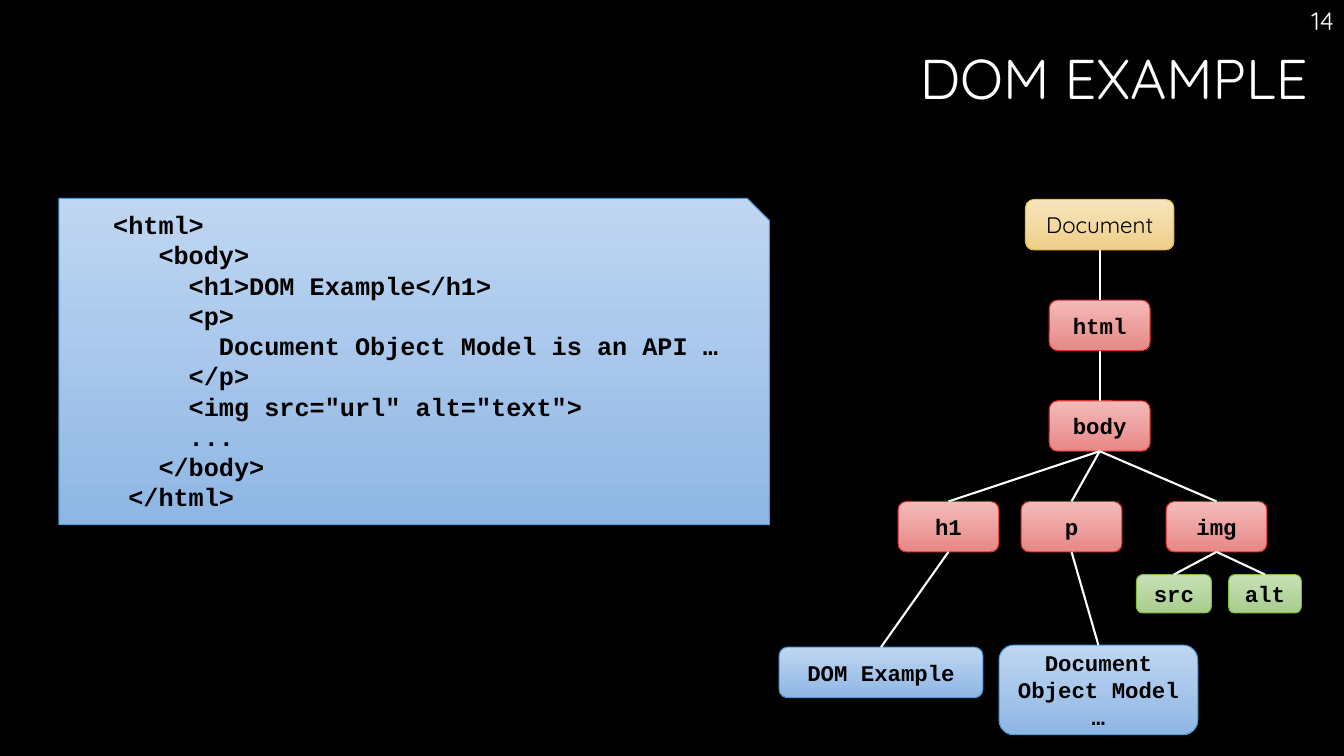
from dataclasses import dataclass

from lxml.etree import SubElement
from pptx import Presentation
from pptx.dml.color import RGBColor
from pptx.enum.shapes import MSO_CONNECTOR as Connector, MSO_SHAPE as ShapeKind
from pptx.enum.text import MSO_ANCHOR as Anchor, MSO_AUTO_SIZE as AutoSize, PP_ALIGN as Align
from pptx.oxml.ns import qn
from pptx.shapes.autoshape import Shape
from pptx.slide import Slide
from pptx.text.text import TextFrame
from pptx.util import Pt

COLOURS = {"background": "000000", "light": "FFFFFF", "dark": "000000"}
# Gradient top, gradient bottom, outline
PALETTES = {
    "text": ("BFD6F2", "8FB7E4", "4A9BDC"),
    "element": ("F3BAB9", "E78887", "DF2E28"),
    "root": ("F8E5BD", "EECF89", "E9BF35"),
    "attribute": ("C8E1B7", "A8CD8D", "81BB42"),
}
SANS, MONO = "Quicksand", "Courier New"
CODE_SIZE = 18
CHARACTER_WIDTH = 0.6 * CODE_SIZE
TREE_TOP, ROW_STEP, NODE_HEIGHT = 142.5, 71.9, 36
BOTTOM, TOP = 2, 0


@dataclass
class Node:
    key: str
    label: str
    palette: str
    centre: float
    top: float
    width: float = 72
    height: float = NODE_HEIGHT
    parent: str = ""


@dataclass
class CodeLine:
    indent: int
    text: str


def row_top(row: int) -> float:
    return TREE_TOP + row * ROW_STEP


NODES = [
    Node("document", "Document", "root", 785.5, row_top(0), 106),
    Node("html", "html", "element", 785.5, row_top(1), parent="document"),
    Node("body", "body", "element", 785.5, row_top(2), parent="html"),
    Node("h1", "h1", "element", 677.5, row_top(3), parent="body"),
    Node("p", "p", "element", 765.4, row_top(3), parent="body"),
    Node("img", "img", "element", 869, row_top(3), parent="body"),
    Node("src", "src", "attribute", 838.5, 410.4, 53.5, 27.4, "img"),
    Node("alt", "alt", "attribute", 903.6, 410.4, 52, 27.4, "img"),
    Node("heading", "DOM Example", "text", 629.3, 462.3, 145.5, parent="h1"),
    Node("paragraph", "Document Object Model …", "text", 784.6, 460.8, 142, 64, "p"),
]

CODE = [
    CodeLine(1, "<html>"),
    CodeLine(4, "<body>"),
    CodeLine(6, "<h1>DOM Example</h1>"),
    CodeLine(6, "<p>"),
    CodeLine(8, "Document Object Model is an API …"),
    CodeLine(6, "</p>"),
    CodeLine(6, '<img src="url" alt="text">'),
    CodeLine(6, "..."),
    CodeLine(4, "</body>"),
    CodeLine(2, "</html>"),
]


def colour(name: str) -> RGBColor:
    return RGBColor.from_string(COLOURS[name])


def format_text(frame: TextFrame, font_name: str, size: float, colour_name: str,
                align: Align, bold: bool = False) -> None:
    for paragraph in frame.paragraphs:
        paragraph.alignment = align
        for run in paragraph.runs:
            run.font.name = font_name
            run.font.size = Pt(size)
            run.font.bold = bold
            run.font.color.rgb = colour(colour_name)


def apply_palette(shape: Shape, palette: str) -> None:
    start, end, outline = PALETTES[palette]
    shape.shadow.inherit = False
    shape.fill.gradient()
    shape.fill.gradient_angle = 270
    for stop, position, value in zip(shape.fill.gradient_stops, (0, 1), (start, end)):
        stop.position = position
        stop.color.rgb = RGBColor.from_string(value)
    shape.line.color.rgb = RGBColor.from_string(outline)
    shape.line.width = Pt(0.75)


def add_title(slide: Slide) -> None:
    title = slide.shapes.title
    title.left, title.top, title.width, title.height = Pt(18.7), Pt(33), Pt(922.5), Pt(101.5)
    frame = title.text_frame
    frame.text = "DOM EXAMPLE"
    frame.auto_size = AutoSize.NONE
    frame.vertical_anchor = Anchor.TOP
    frame.paragraphs[0].line_spacing = 0.9
    format_text(frame, SANS, 40, "light", Align.RIGHT)


def add_page_number(slide: Slide) -> None:
    frame = slide.shapes.add_textbox(Pt(752.4), Pt(0), Pt(207.4), Pt(29)).text_frame
    frame.word_wrap = True
    frame.text = "14"
    format_text(frame, SANS, 18, "light", Align.RIGHT)


def add_code(slide: Slide) -> None:
    panel = slide.shapes.add_shape(ShapeKind.SNIP_1_RECTANGLE,
                                   Pt(42), Pt(141.8), Pt(507.6), Pt(233))
    panel.adjustments[0] = 0.068
    apply_palette(panel, "text")
    frame = panel.text_frame
    frame.word_wrap = True
    frame.vertical_anchor = Anchor.TOP
    frame.margin_left, frame.margin_top = Pt(28), Pt(0)
    frame.text = "\n".join(line.text for line in CODE)
    format_text(frame, MONO, CODE_SIZE, "dark", Align.LEFT, bold=True)
    for paragraph, line in zip(frame.paragraphs, CODE):
        properties = paragraph._p.get_or_add_pPr()
        properties.set("marL", str(Pt(line.indent * CHARACTER_WIDTH)))
        properties.set("indent", "0")


def add_node(slide: Slide, node: Node) -> Shape:
    shape = slide.shapes.add_shape(ShapeKind.ROUNDED_RECTANGLE,
                                   Pt(node.centre - node.width / 2), Pt(node.top),
                                   Pt(node.width), Pt(node.height))
    apply_palette(shape, node.palette)
    frame = shape.text_frame
    frame.word_wrap = True
    frame.vertical_anchor = Anchor.MIDDLE
    frame.text = node.label
    is_root = node.palette == "root"
    format_text(frame, SANS if is_root else MONO, 16, "dark", Align.CENTER, bold=not is_root)
    return shape


def add_branch(slide: Slide, parent: Shape, child: Shape) -> None:
    branch = slide.shapes.add_connector(Connector.STRAIGHT, Pt(0), Pt(0), Pt(0), Pt(0))
    branch.begin_connect(parent, BOTTOM)
    branch.end_connect(child, TOP)
    branch.line.color.rgb = colour("light")
    branch.line.width = Pt(1.5)
    SubElement(branch._element.spPr, qn("a:effectLst"))


def main() -> None:
    presentation = Presentation()
    presentation.slide_width, presentation.slide_height = Pt(960), Pt(540)
    slide = presentation.slides.add_slide(presentation.slide_layouts[5])
    slide.background.fill.solid()
    slide.background.fill.fore_color.rgb = colour("background")

    # Heading and source code
    add_title(slide)
    add_code(slide)

    # Document tree
    shapes = {node.key: add_node(slide, node) for node in NODES}
    for node in NODES:
        if node.parent:
            add_branch(slide, shapes[node.parent], shapes[node.key])

    add_page_number(slide)
    presentation.save("out.pptx")


if __name__ == "__main__":
    main()
